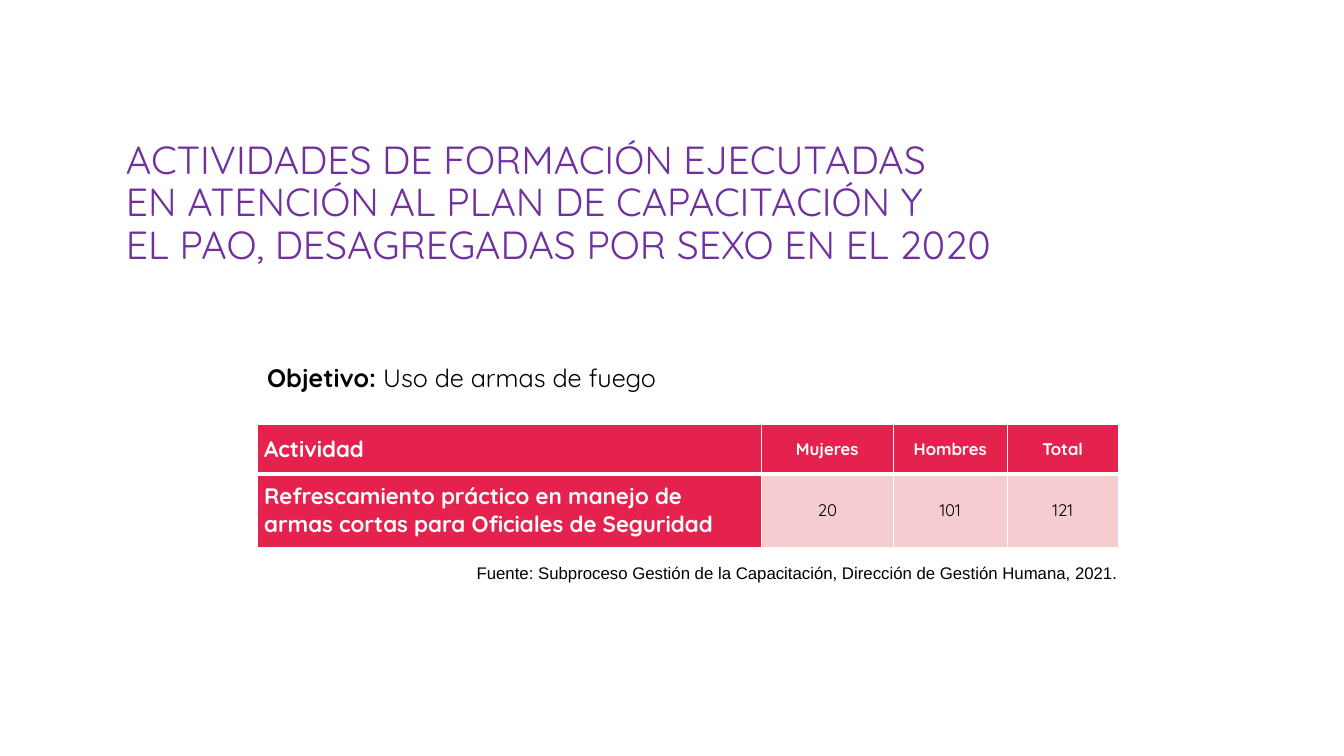
"""Build the slide on training activities broken down by sex."""
from lxml import etree
from pptx import Presentation
from pptx.dml.color import RGBColor
from pptx.enum.text import MSO_ANCHOR, PP_ALIGN
from pptx.oxml.ns import qn
from pptx.util import Inches, Pt

LEFT, CENTER, RIGHT = PP_ALIGN.LEFT, PP_ALIGN.CENTER, PP_ALIGN.RIGHT
TOP, MIDDLE = MSO_ANCHOR.TOP, MSO_ANCHOR.MIDDLE

COLORS = {
    "title": "7030A0",
    "text": "000000",
    "white": "FFFFFF",
    "header": "E5224E",
    "value": "F5CDD0",
}
FONT = "Quicksand"
SOURCE_FONT = "Arial"

TITLE = (
    "ACTIVIDADES DE FORMACIÓN EJECUTADAS\n"
    "EN ATENCIÓN AL PLAN DE CAPACITACIÓN Y\n"
    "EL PAO, DESAGREGADAS POR SEXO EN EL 2020"
)
SOURCE = "Fuente: Subproceso Gestión de la Capacitación, Dirección de Gestión Humana, 2021."
COLUMN_WIDTHS = [5, 1.31, 1.13, 1.1]
ROW_HEIGHTS = [0.49, 0.73]
ROWS = [
    ["Actividad", "Mujeres", "Hombres", "Total"],
    ["Refrescamiento práctico en manejo de armas cortas para Oficiales de Seguridad",
     "20", "101", "121"],
]


def style_font(font, size, color, name=FONT, bold=False):
    """Set the typeface, size, colour and weight of a font."""
    font.name = name
    font.size = Pt(size)
    font.bold = bold
    font.color.rgb = RGBColor.from_string(COLORS[color])


def add_paragraph_box(page, box, anchor=TOP, align=LEFT):
    """Add a wrapping text box and return its first paragraph."""
    frame = page.shapes.add_textbox(*map(Inches, box)).text_frame
    frame.word_wrap = True
    frame.vertical_anchor = anchor
    para = frame.paragraphs[0]
    para.alignment = align
    return para


def add_title(page, box):
    """Add the slide title."""
    para = add_paragraph_box(page, box, MIDDLE)
    para.text = TITLE
    para.line_spacing = 0.9
    style_font(para.font, 28, "title")


def add_objective(page, box):
    """Add the objective with its bold label."""
    para = add_paragraph_box(page, box)
    for text, bold in [("Objetivo: ", True), ("Uso de armas de fuego", False)]:
        span = para.add_run()
        span.text = text
        style_font(span.font, 18, "text", bold=bold)


def set_borders(cell, widths):
    """Draw white borders of the given widths, keyed by edge letter."""
    properties = cell._tc.get_or_add_tcPr()
    for index, (edge, width) in enumerate(widths.items()):
        line = etree.Element(qn(f"a:ln{edge}"), w=str(Pt(width)))
        fill = etree.SubElement(line, qn("a:solidFill"))
        etree.SubElement(fill, qn("a:srgbClr"), val=COLORS["white"])
        properties.insert(index, line)


def fill_cell(cell, text, row, column):
    """Write and style one cell according to its row and column."""
    is_value = row > 0 and column > 0
    cell.fill.solid()
    cell.fill.fore_color.rgb = RGBColor.from_string(COLORS["value" if is_value else "header"])
    cell.margin_left = cell.margin_right = Inches(0.07)
    cell.margin_top = cell.margin_bottom = 0
    cell.vertical_anchor = MIDDLE
    para = cell.text_frame.paragraphs[0]
    para.text = text
    para.alignment = CENTER if column else LEFT
    style_font(para.font, 12 if column else 16, "text" if is_value else "white",
               bold=not is_value)
    set_borders(cell, {"L": 1, "R": 1, "T": 3 if row else 1, "B": 1 if row else 3})


def add_activity_table(page, box):
    """Add the table of participants per activity."""
    table = page.shapes.add_table(len(ROWS), len(COLUMN_WIDTHS), *map(Inches, box)).table
    table.horz_banding = False
    for column, width in zip(table.columns, COLUMN_WIDTHS):
        column.width = Inches(width)
    for row, height in zip(table.rows, ROW_HEIGHTS):
        row.height = Inches(height)
    for row, texts in enumerate(ROWS):
        for column, text in enumerate(texts):
            fill_cell(table.cell(row, column), text, row, column)


def add_source(page, box):
    """Add the source line below the table."""
    para = add_paragraph_box(page, box, align=RIGHT)
    para.text = SOURCE
    style_font(para.font, 12, "text", SOURCE_FONT)


def main():
    """Build and save the deck."""
    deck = Presentation()
    deck.slide_width, deck.slide_height = Inches(13.33), Inches(7.5)
    page = deck.slides.add_slide(deck.slide_layouts[6])
    add_title(page, (1.15, 1.32, 9.25, 1.41))
    add_objective(page, (2.55, 3.55, 10.08, 0.4))
    add_activity_table(page, (2.55, 4.21, sum(COLUMN_WIDTHS), sum(ROW_HEIGHTS)))
    add_source(page, (4.62, 5.53, 6.57, 0.3))
    deck.save("out.pptx")


if __name__ == "__main__":
    main()
